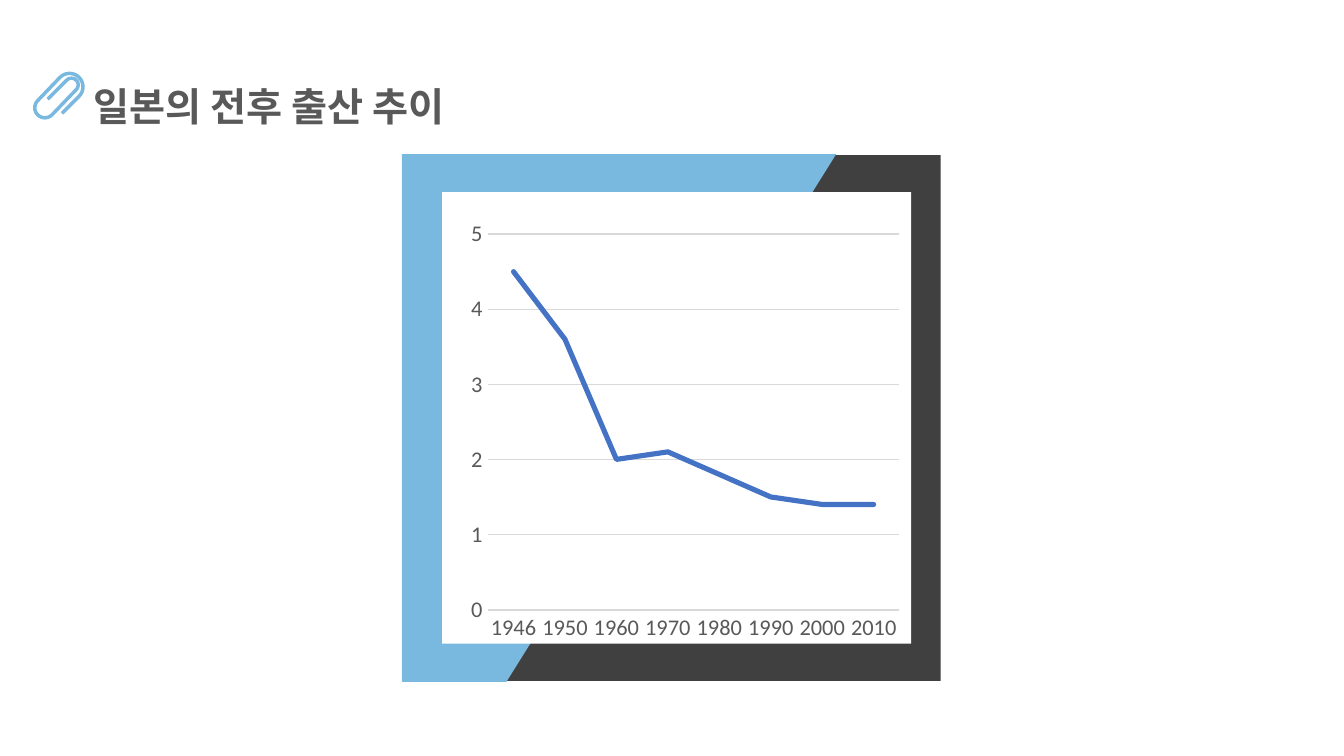
from math import cos, pi, sin, sqrt

from lxml import etree
from pptx import Presentation
from pptx.chart.data import CategoryChartData
from pptx.dml.color import RGBColor
from pptx.enum import chart as charts, shapes, text
from pptx.oxml import parse_xml
from pptx.oxml.ns import nsdecls, qn
from pptx.util import Inches, Pt

SKY = RGBColor(0x7A, 0xB9, 0xDF)
CHARCOAL = RGBColor(0x40, 0x40, 0x40)
WHITE = RGBColor(0xFF, 0xFF, 0xFF)
GRAY = RGBColor(0x59, 0x59, 0x59)
GRID = RGBColor(0xD9, 0xD9, 0xD9)
BLUE = RGBColor(0x44, 0x72, 0xC4)
TITLE_FONT = "Noto Sans CJK KR"
CHART_FONT = "Calibri"
BIRTH_RATES = {"1946": 4.5, "1950": 3.6, "1960": 2, "1970": 2.1,
               "1980": 1.8, "1990": 1.5, "2000": 1.4, "2010": 1.4}


def add_title(slide, left, top, width, height):
    """Place the slide heading centred in its box."""
    heading = slide.shapes.add_textbox(*map(Inches, (left, top, width, height)))
    heading.text_frame.word_wrap = True
    line = heading.text_frame.paragraphs[0]
    line.text = "일본의 전후 출산 추이"
    line.alignment = text.PP_ALIGN.CENTER
    line.line_spacing = 1.5
    font = line.runs[0].font
    font.size, font.bold, font.name = Pt(21), True, TITLE_FONT
    font.color.rgb = GRAY
    etree.SubElement(font._element, qn("a:ea"), typeface=TITLE_FONT)


def wire_edge(offset):
    """Return one edge of the clip wire as (along, across) points of a spiral."""
    bends = [(0.1, 0.01, 0.1), (-0.14, -0.01, 0.075), (0.12, 0.01, 0.05)]
    steps = 16
    edge = [(-0.08, 0.11 + offset)]
    for turn, (along, across, radius) in enumerate(bends):
        for step in range(steps + 1):
            angle = pi * (turn + step / steps)
            reach = radius + offset
            edge.append((along + reach * sin(angle), across + reach * cos(angle)))
    edge.append((-0.08, edge[-1][1]))
    return edge


def add_paperclip(slide, left, top, width, height):
    """Draw a diagonal paperclip centred in its box."""
    middle_x, middle_y = left + width / 2, top + height / 2
    outline = wire_edge(0.013) + wire_edge(-0.013)[::-1]
    points = [(Inches(middle_x + (along + across) / sqrt(2)),
               Inches(middle_y + (across - along) / sqrt(2)))
              for along, across in outline]
    builder = slide.shapes.build_freeform(*points[0], scale=1.0)
    builder.add_line_segments(points[1:], close=True)
    clip = builder.convert_to_shape()
    clip.shadow.inherit = False
    clip.fill.solid()
    clip.fill.fore_color.rgb = SKY
    clip.line.fill.background()


def add_panel(slide, left, top, width, height):
    """Add a rectangle without line or shadow."""
    panel = slide.shapes.add_shape(
        shapes.MSO_SHAPE.RECTANGLE, *map(Inches, (left, top, width, height)))
    panel.shadow.inherit = False
    panel.line.fill.background()
    return panel


def add_frame(slide, left, top, width, height):
    """Place the two-tone frame, its white inside and the chart."""
    border = add_panel(slide, left, top, width, height)
    border.fill.gradient()
    border.fill.gradient_angle = 148
    for stop, color in zip(border.fill.gradient_stops, (CHARCOAL, SKY)):
        stop.position = 0.5
        stop.color.rgb = color
    inside = add_panel(slide, left + 0.3, top + 0.28, width - 0.52, height - 0.56)
    inside.fill.solid()
    inside.fill.fore_color.rgb = WHITE
    add_birth_chart(slide, left + 0.44, top + 0.43, width - 0.68, height - 0.67)


def add_birth_chart(slide, left, top, width, height):
    """Plot the birth rates as a line chart."""
    rates = CategoryChartData()
    rates.categories = list(BIRTH_RATES)
    rates.add_series("Series 1", list(BIRTH_RATES.values()))
    chart = slide.shapes.add_chart(
        charts.XL_CHART_TYPE.LINE, *map(Inches, (left, top, width, height)),
        rates).chart
    chart.has_legend = chart.has_title = False
    chart.font.name, chart.font.size = CHART_FONT, Pt(10)
    chart.plots[0].vary_by_categories = False
    trend = chart.plots[0].series[0]
    trend.smooth = False
    trend.marker.style = charts.XL_MARKER_STYLE.NONE
    trend.format.line.color.rgb = BLUE
    trend.format.line.width = Pt(2.75)
    trend.format.line._get_or_add_ln().set("cap", "rnd")

    years, levels = chart.category_axis, chart.value_axis
    for axis in (years, levels):
        axis.major_tick_mark = axis.minor_tick_mark = charts.XL_TICK_MARK.NONE
        labels = axis.tick_labels.font
        labels.size, labels.name = Pt(12), CHART_FONT
        labels.color.rgb = GRAY
    years.format.line.color.rgb = GRID
    years.format.line.width = Pt(1)
    levels.format.line.fill.background()
    levels.minimum_scale, levels.maximum_scale, levels.major_unit = 0, 5, 1
    levels.has_major_gridlines = True
    levels.major_gridlines.format.line.color.rgb = GRID
    levels.major_gridlines.format.line.width = Pt(0.75)
    set_plot_area(chart, x=0.06, y=0.05, w=0.92, h=0.86)


def set_plot_area(chart, **shares):
    """Fix the inner plot area as shares of the chart box."""
    plot_area = chart._chartSpace.chart.plotArea
    for automatic in plot_area.findall(qn("c:layout")):
        plot_area.remove(automatic)
    modes = "".join(f'<c:{side}Mode val="edge"/>' for side in "xy")
    sizes = "".join(f'<c:{side} val="{share}"/>' for side, share in shares.items())
    plot_area.insert(0, parse_xml(
        f'<c:layout {nsdecls("c")}><c:manualLayout><c:layoutTarget val="inner"/>'
        f'{modes}{sizes}</c:manualLayout></c:layout>'))


def main():
    """Build and save the slide."""
    deck = Presentation()
    deck.slide_width = Inches(10)
    deck.slide_height = deck.slide_width * 9 // 16
    slide = deck.slides.add_slide(deck.slide_layouts[6])
    add_title(slide, -0.26, 0.39, 4.53, 0.55)
    add_paperclip(slide, 0.25, 0.53, 0.38, 0.36)
    add_frame(slide, 2.99, 1.15, 4.01, 3.92)
    deck.save("out.pptx")


if __name__ == "__main__":
    main()
